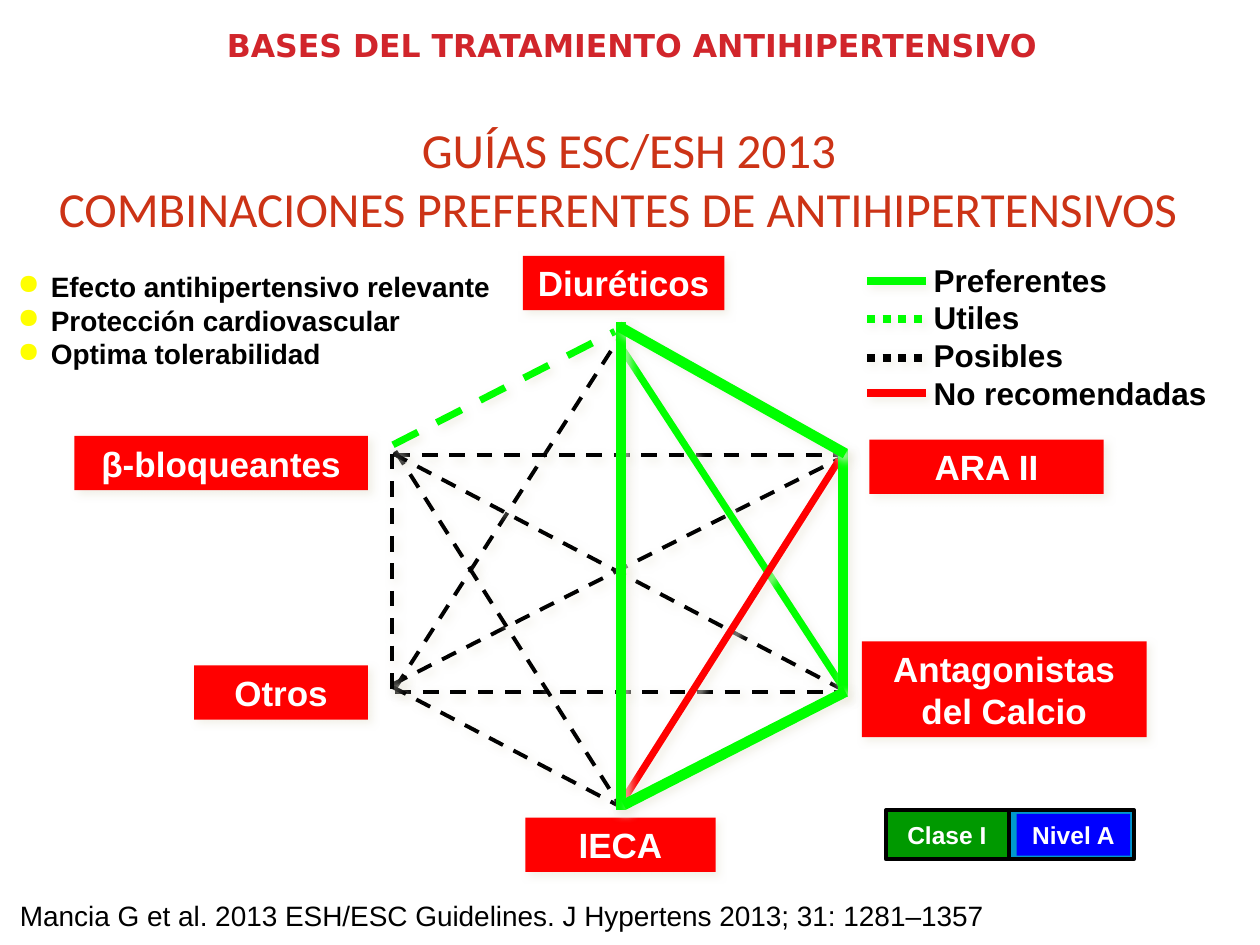
from lxml import etree
from pptx import Presentation
from pptx.dml.color import RGBColor
from pptx.enum import dml, shapes, text
from pptx.oxml import ns
from pptx.util import Pt

RED = RGBColor(0xFF, 0x00, 0x00)
LIME = RGBColor(0x00, 0xFF, 0x00)
GREEN = RGBColor(0x00, 0x99, 0x00)
BLUE = RGBColor(0x00, 0x00, 0xFF)
TEAL = RGBColor(0x00, 0x99, 0xCC)
BLACK = RGBColor(0x00, 0x00, 0x00)
WHITE = RGBColor(0xFF, 0xFF, 0xFF)
YELLOW = RGBColor(0xFF, 0xFF, 0x00)
BRICK = RGBColor(0xCC, 0x33, 0x16)
CRIMSON = RGBColor(0xD1, 0x25, 0x2B)
SHADOW = RGBColor(0xEE, 0xEC, 0xE1)

DASH = dml.MSO_LINE.DASH
DOT = dml.MSO_LINE.ROUND_DOT  # written to the file as sysDot
CENTER = text.PP_ALIGN.CENTER
LEFT = text.PP_ALIGN.LEFT
MIDDLE = text.MSO_ANCHOR.MIDDLE
TOP = text.MSO_ANCHOR.TOP


def write(shape, lines, size, color, font="Arial", bold=True, align=CENTER,
          anchor=MIDDLE, inset=6.5, leading=None):
    """Fill the shape with one paragraph per line; leading is in points."""
    frame = shape.text_frame
    frame_format = {"word_wrap": True, "vertical_anchor": anchor,
                    "margin_left": Pt(inset), "margin_right": Pt(inset),
                    "margin_top": Pt(3.6), "margin_bottom": Pt(3.6)}
    for name, value in frame_format.items():
        setattr(frame, name, value)
    frame.text = "\n".join(lines)
    for paragraph in frame.paragraphs:
        paragraph.alignment = align
        if leading:
            paragraph.line_spacing = Pt(leading)
        run_font = paragraph.runs[0].font
        for name, value in {"name": font, "size": Pt(size), "bold": bold}.items():
            setattr(run_font, name, value)
        run_font.color.rgb = color


def cast_shadow(shape):
    effects = shape._element.spPr.find(ns.qn("a:effectLst"))
    if effects is None:
        effects = etree.SubElement(shape._element.spPr, ns.qn("a:effectLst"))
    outer = etree.SubElement(effects, ns.qn("a:outerShdw"), blurRad=str(Pt(5)),
                             dist=str(Pt(3)), dir="2700000", algn="ctr", rotWithShape="0")
    tint = etree.SubElement(outer, ns.qn("a:srgbClr"), val=str(SHADOW))
    etree.SubElement(tint, ns.qn("a:alpha"), val="75000")


deck = Presentation()
deck.slide_width, deck.slide_height = Pt(720), Pt(540)
slide = deck.slides.add_slide(deck.slide_layouts[6])
canvas = slide.shapes

# Headings and citation
heading = canvas.add_textbox(Pt(2.9), Pt(74.9), Pt(712.8), Pt(54))
write(heading, ["GUÍAS ESC/ESH 2013", "COMBINACIONES PREFERENTES DE ANTIHIPERTENSIVOS"],
      28, BRICK, font="Calibri", bold=False, inset=7.2)
heading.text_frame.paragraphs[1]._p.get_or_add_pPr().set("marR", str(Pt(12.5)))

citation = canvas.add_textbox(Pt(4.3), Pt(509.8), Pt(640.8), Pt(26.6))
write(citation, ["Mancia G et al. 2013 ESH/ESC Guidelines. J Hypertens 2013; 31: 1281–1357"],
      16, BLACK, bold=False, align=LEFT, anchor=TOP, inset=7.2, leading=19.2)

section = canvas.add_textbox(Pt(22.3), Pt(11.5), Pt(677.5), Pt(46))
write(section, ["BASES DEL TRATAMIENTO ANTIHIPERTENSIVO"], 18, CRIMSON,
      font="DejaVu Sans", anchor=TOP, inset=7.2)

# Drug classes at the corners of the hexagon: left, top, width, height, lines
drug_classes = [
    (298.8, 146.2, 115.2, 31, ["Diuréticos"]),
    (300.2, 467.3, 108.7, 31, ["IECA"]),
    (492.5, 366.5, 162.7, 54.7, ["Antagonistas", "del Calcio"]),
    (496.8, 251.3, 133.9, 31, ["ARA II"]),
    (42.5, 249.1, 167.8, 31, ["β-bloqueantes"]),
    (110.9, 380.2, 99.4, 31, ["Otros"]),
]
for left, top, width, height, lines in drug_classes:
    drug = canvas.add_shape(shapes.MSO_SHAPE.RECTANGLE, Pt(left), Pt(top), Pt(width), Pt(height))
    drug.shadow.inherit = False
    drug.fill.solid()
    drug.fill.fore_color.rgb = RED
    drug.line.fill.background()
    cast_shadow(drug)
    write(drug, lines, 20, WHITE, leading=24)

# Combinations by kind: color, weight, dash, ends (x1, y1, x2, y2)
combinations = [
    (BLACK, 2.25, DASH, [
        (226, 393, 353.5, 193.7), (224.6, 391, 483.8, 260), (225.4, 260, 479.5, 260),
        (226, 395.3, 481.7, 395.3), (226, 257.8, 355, 461.5), (224, 392.4, 354.2, 460.8),
        (224.6, 259.2, 483.8, 395.3), (224, 259.2, 224, 395.3)]),
    (LIME, 4, None, [(354.2, 197.3, 481, 391.7)]),
    (RED, 4, None, [(479.5, 262.8, 353.5, 461.5)]),
    (LIME, 4, DASH, [(224.6, 254.2, 351.4, 189.4)]),
    (LIME, 6, None, [
        (355, 184.3, 355, 463), (481.7, 257, 481.7, 398.2),
        (356.4, 460, 483.1, 395.3), (353.5, 186.5, 483.1, 259.2)]),
]
# Legend samples share the same columns
legend = [("Preferentes", LIME, None, 160.6), ("Utiles", LIME, DOT, 182.2),
          ("Posibles", BLACK, DOT, 204.5), ("No recomendadas", RED, None, 224.6)]
for label, color, dash, y in legend:
    combinations.append((color, 4.5, dash, [(495.4, y, 529.2, y)]))

for color, weight, dash, ends in combinations:
    for x1, y1, x2, y2 in ends:
        link = canvas.add_connector(shapes.MSO_CONNECTOR.STRAIGHT, Pt(x1), Pt(y1), Pt(x2), Pt(y2))
        link.line.color.rgb = color
        for name, value in {"width": Pt(weight), "dash_style": dash}.items():
            setattr(link.line, name, value)
        cast_shadow(link)

legend_labels = canvas.add_textbox(Pt(527), Pt(145.4), Pt(176.4), Pt(93.6))
write(legend_labels, [entry[0] for entry in legend], 18, BLACK,
      align=LEFT, anchor=TOP, leading=21.6)

# Criteria
criteria = canvas.add_textbox(Pt(3.6), Pt(150.5), Pt(285.8), Pt(64.8))
write(criteria, ["Efecto antihipertensivo relevante", "Protección cardiovascular",
                 "Optima tolerabilidad"], 16, BLACK, align=LEFT, anchor=TOP, leading=19.2)
for criterion in criteria.text_frame.paragraphs:
    properties = criterion._p.get_or_add_pPr()
    properties.set("marL", str(Pt(19)))
    properties.set("indent", str(Pt(-19)))
    bullet_color = etree.SubElement(properties, ns.qn("a:buClr"))
    etree.SubElement(bullet_color, ns.qn("a:srgbClr"), val=str(YELLOW))
    etree.SubElement(properties, ns.qn("a:buChar"), char="●")

# Evidence badge: left, top, width, height, fill, framed, label
evidence = canvas.add_group_shape()
badge_parts = [
    (576.7, 463, 71.3, 28, TEAL, True, None),
    (506.2, 463, 70.5, 28, GREEN, True, None),
    (507.6, 465.1, 67, 23.8, GREEN, False, "Clase I"),
    (581, 465.1, 64.8, 23.8, BLUE, False, "Nivel A"),
]
for left, top, width, height, fill, framed, label in badge_parts:
    part = evidence.shapes.add_shape(shapes.MSO_SHAPE.RECTANGLE,
                                     Pt(left), Pt(top), Pt(width), Pt(height))
    part.shadow.inherit = False
    part.fill.solid()
    part.fill.fore_color.rgb = fill
    if framed:
        part.line.color.rgb = BLACK
        part.line.width = Pt(2.25)
    else:
        part.line.fill.background()
    if label:
        write(part, [label], 14, WHITE, leading=16.8)

deck.save("out.pptx")
